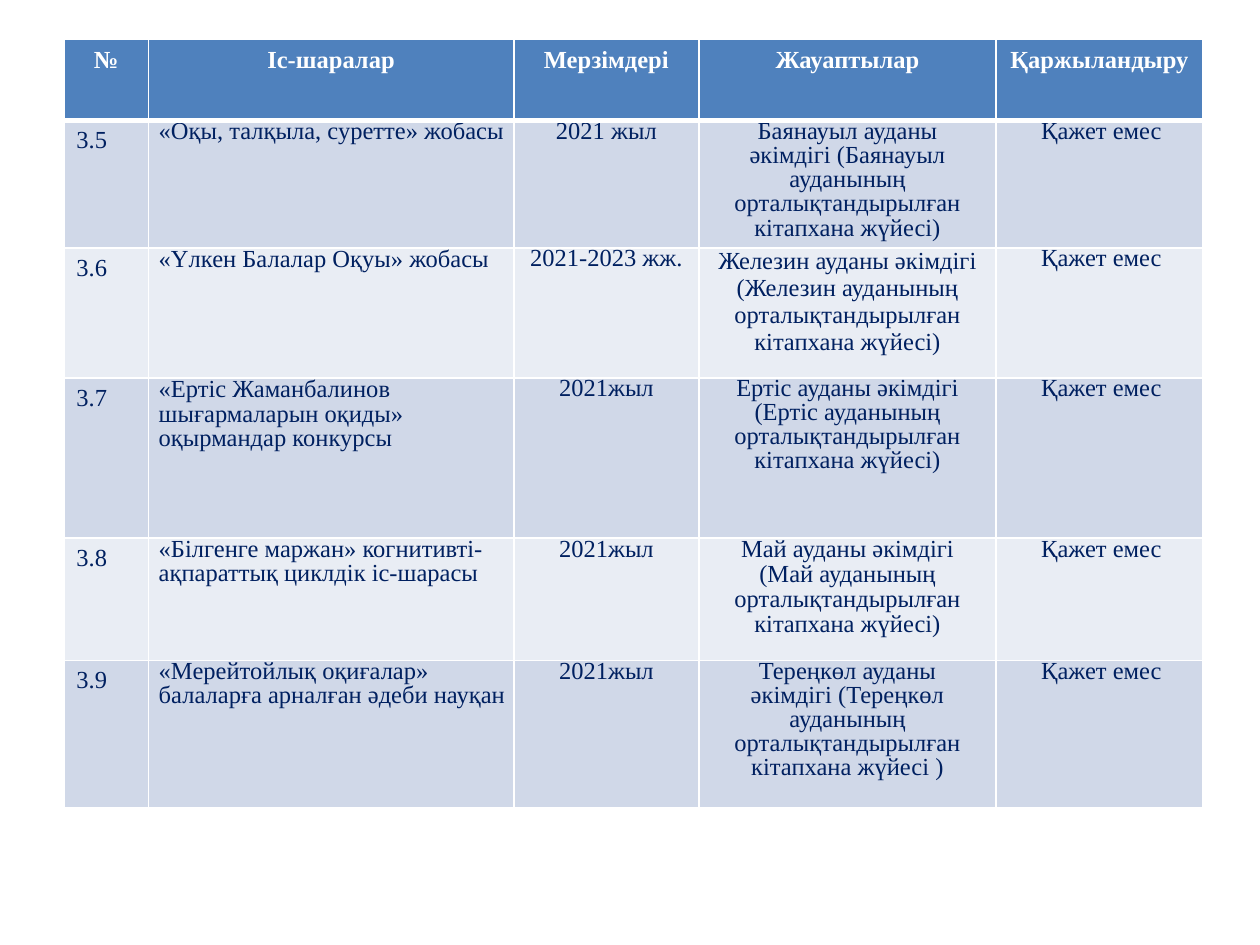
from dataclasses import dataclass

from lxml import etree
from pptx import Presentation
from pptx.dml.color import RGBColor
from pptx.enum.text import PP_ALIGN
from pptx.oxml.ns import qn
from pptx.util import Cm, Pt

LEFT, MID = PP_ALIGN.LEFT, PP_ALIGN.CENTER


@dataclass(frozen=True)
class Theme:
    font: str = "Times New Roman"
    size: float = 14
    head: str = "4F81BD"
    bands: tuple = ("D0D8E8", "E9EDF4")
    ink: str = "002060"
    white: str = "FFFFFF"
    thin: float = 1
    thick: float = 3


@dataclass(frozen=True)
class Look:
    """Alignment, line spacing, left and right indent in cm, cell padding."""
    align: int = LEFT
    lead: object = 1.0
    left: float = 0
    right: float = 0
    inset: bool = False


class Deck:
    def __init__(self, theme):
        self.theme = theme
        self.prs = Presentation()
        self.prs.slide_width, self.prs.slide_height = Cm(25.4), Cm(19.05)
        self.slide = self.prs.slides.add_slide(self.prs.slide_layouts[6])

    def table(self, left, top, widths, heights):
        frame = self.slide.shapes.add_table(
            len(heights), len(widths), Cm(left), Cm(top),
            Cm(sum(widths)), Cm(sum(heights)))
        table = frame.table
        table.horz_banding = False
        for col, width in zip(table.columns, widths):
            col.width = Cm(width)
        for row, height in zip(table.rows, heights):
            row.height = Cm(height)
        return table

    def edges(self, cell, top, bottom):
        thin = self.theme.thin
        props = cell._tc.get_or_add_tcPr()
        sides = (("lnL", thin), ("lnR", thin), ("lnT", top), ("lnB", bottom))
        for spot, (side, width) in enumerate(sides):
            line = etree.Element(qn(f"a:{side}"), w=str(Pt(width)))
            fill = etree.SubElement(line, qn("a:solidFill"))
            etree.SubElement(fill, qn("a:srgbClr"), val=self.theme.white)
            props.insert(spot, line)

    def cell(self, cell, text, look, fill, ink, bold=False):
        side, end = (Cm(0.25), Cm(0.13)) if look.inset else (0, 0)
        cell.margin_left = cell.margin_right = side
        cell.margin_top = cell.margin_bottom = end
        cell.fill.solid()
        cell.fill.fore_color.rgb = RGBColor.from_string(fill)
        cell.text_frame.text = text
        para = cell.text_frame.paragraphs[0]
        para.alignment = look.align
        para.line_spacing = look.lead
        props = para._p.get_or_add_pPr()
        props.set("marL", str(Cm(look.left)))
        props.set("marR", str(Cm(look.right)))
        for run in para.runs:
            run.font.name = self.theme.font
            run.font.size = Pt(self.theme.size)
            run.font.bold = bold
            run.font.color.rgb = RGBColor.from_string(ink)


HEADS = ("№", "Іс-шаралар", "Мерзімдері", "Жауаптылар", "Қаржыландыру")
FUNDS = "Қажет емес"
LIB = "орталықтандырылған кітапхана жүйесі"
WIDTHS = (1.7, 7.37, 3.73, 5.99, 4.17)
HEIGHTS = (1.63, 2.57, 2.62, 3.23, 2.46, 2.97)

# Event, its line pitch, term, owner, its line pitch, owner's side indent
PLAN = (
    ("«Оқы, талқыла, суретте» жобасы", 13.8, "2021 жыл",
     f"Баянауыл ауданы әкімдігі (Баянауыл ауданының {LIB})", 13.8, 0.6),
    ("«Үлкен Балалар Оқуы» жобасы", 14.4, "2021-2023 жж.",
     f"Железин ауданы әкімдігі (Железин ауданының {LIB})", 15.4, 0),
    ("«Ертіс Жаманбалинов шығармаларын оқиды» оқырмандар конкурсы", 14.1,
     "2021жыл", f"Ертіс ауданы әкімдігі (Ертіс ауданының {LIB})", 13.7, 0.6),
    ("«Білгенге маржан» когнитивті-ақпараттық циклдік іс-шарасы", 13.9,
     "2021жыл", f"Май ауданы әкімдігі (Май ауданының {LIB})", 14.2, 0.6),
    ("«Мерейтойлық оқиғалар» балаларға арналған әдеби науқан", 13.8,
     "2021жыл", f"Тереңкөл ауданы әкімдігі (Тереңкөл ауданының {LIB} )",
     13.8, 0.6),
)


def main():
    theme = Theme()
    deck = Deck(theme)
    table = deck.table(1.29, 0.8, WIDTHS, HEIGHTS)

    title = Look(MID, 1.02, inset=True)
    for col, text in enumerate(HEADS):
        cell = table.cell(0, col)
        deck.cell(cell, text, title, theme.head, theme.white, bold=True)
        deck.edges(cell, theme.thin, theme.thick)

    for row, (event, pitch, term, owner, gap, side) in enumerate(PLAN, 1):
        items = (
            (f"3.{row + 4}", Look(inset=True)),
            (event, Look(LEFT, Pt(pitch), 0.21)),
            (term, Look(MID, Pt(13.8))),
            (owner, Look(MID, Pt(gap), side, side)),
            (FUNDS, Look(LEFT, Pt(13.8), 0.91)),
        )
        band = theme.bands[(row - 1) % 2]
        top = theme.thick if row == 1 else theme.thin
        for col, (text, look) in enumerate(items):
            cell = table.cell(row, col)
            deck.cell(cell, text, look, band, theme.ink)
            deck.edges(cell, top, theme.thin)

    deck.prs.save("out.pptx")


if __name__ == "__main__":
    main()
